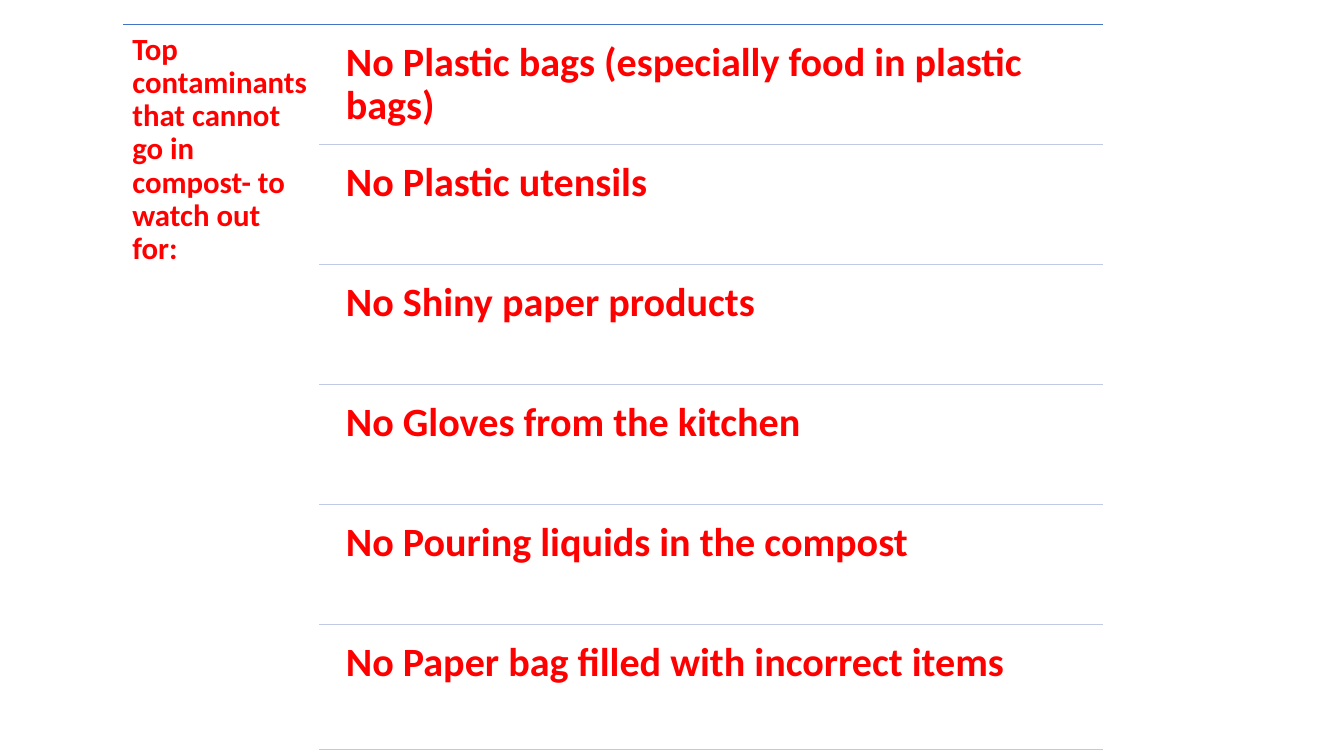
from dataclasses import dataclass

from lxml import etree
from pptx import Presentation, util as u
from pptx.dml.color import RGBColor
from pptx.enum import shapes, text
from pptx.oxml.ns import qn


@dataclass(frozen=True)
class Theme:
    font: str = "Calibri"
    warning: RGBColor = RGBColor(0xFF, 0x00, 0x00)
    top_rule: RGBColor = RGBColor(0x44, 0x72, 0xC4)
    row_rule: RGBColor = RGBColor(0xC1, 0xC9, 0xE4)
    heading_size: int = 33
    item_size: int = 43
    rule_width: int = 1


@dataclass(frozen=True)
class Box:
    left: float
    top: float
    width: float
    height: float


THEME = Theme()
HEADING = "Top contaminants that cannot go in compost- to watch out for:"
ITEMS = [
    "No Plastic bags (especially food in plastic bags)",
    "No Plastic utensils",
    "No Shiny paper products",
    "No Gloves from the kitchen",
    "No Pouring liquids in the compost",
    "No Paper bag filled with incorrect items",
]
ROW_PITCH = 1.786
ROW_GAP = 0.085
ITEM_INDENT = 0.22
LAST_ROW_EXTRA = 0.08


def write_text(shape, words, *, size, inset):
    frame = shape.text_frame
    frame.word_wrap = True
    frame.auto_size = text.MSO_AUTO_SIZE.NONE
    frame.vertical_anchor = text.MSO_ANCHOR.TOP
    frame.margin_left = frame.margin_right = u.Inches(inset)
    frame.margin_top = frame.margin_bottom = u.Inches(inset)
    para = frame.paragraphs[0]
    para.alignment = text.PP_ALIGN.LEFT
    para.line_spacing = 0.9
    para.space_before = u.Pt(0)
    span = para.add_run()
    span.text = words
    span.font.name = THEME.font
    span.font.size = u.Pt(size)
    span.font.bold = True
    span.font.color.rgb = THEME.warning


def add_rule(page, left, top, width, color):
    """Draw a horizontal line without a shadow."""
    rule = page.shapes.add_connector(
        shapes.MSO_CONNECTOR.STRAIGHT,
        u.Inches(left), u.Inches(top), u.Inches(left + width), u.Inches(top))
    rule.line.color.rgb = color
    rule.line.width = u.Pt(THEME.rule_width)
    etree.SubElement(rule._element.spPr, qn("a:effectLst"))


def add_heading(page, box):
    title = page.shapes.title
    title.left, title.top = u.Inches(box.left), u.Inches(box.top)
    title.width, title.height = u.Inches(box.width), u.Inches(box.height)
    write_text(title, HEADING, size=THEME.heading_size, inset=0.14)


def add_items(page, box):
    """Stack the items in equal rows, each closed by a rule."""
    for row, item in enumerate(ITEMS):
        top = box.top + ROW_GAP + row * ROW_PITCH
        height = ROW_PITCH - ROW_GAP
        if row == len(ITEMS) - 1:
            height += LAST_ROW_EXTRA
        label = page.shapes.add_textbox(
            u.Inches(box.left + ITEM_INDENT), u.Inches(top),
            u.Inches(box.width - ITEM_INDENT), u.Inches(height))
        write_text(label, item, size=THEME.item_size, inset=0.18)
        add_rule(page, box.left, top + height, box.width, THEME.row_rule)


def add_contaminants_page(deck, box):
    page = deck.slides.add_slide(deck.slide_layouts.get_by_name("Title Only"))
    heading_width = box.width / 5
    add_rule(page, box.left, box.top, box.width, THEME.top_rule)
    add_heading(page, Box(box.left, box.top, heading_width, box.height))
    add_items(page, Box(box.left + heading_width, box.top,
                        box.width - heading_width, box.height))


def main():
    deck = Presentation()
    deck.slide_width = u.Inches(20)
    deck.slide_height = u.Inches(11.25)
    add_contaminants_page(deck, Box(1.83, 0.36, 14.59, 10.88))
    deck.save("out.pptx")


if __name__ == "__main__":
    main()
